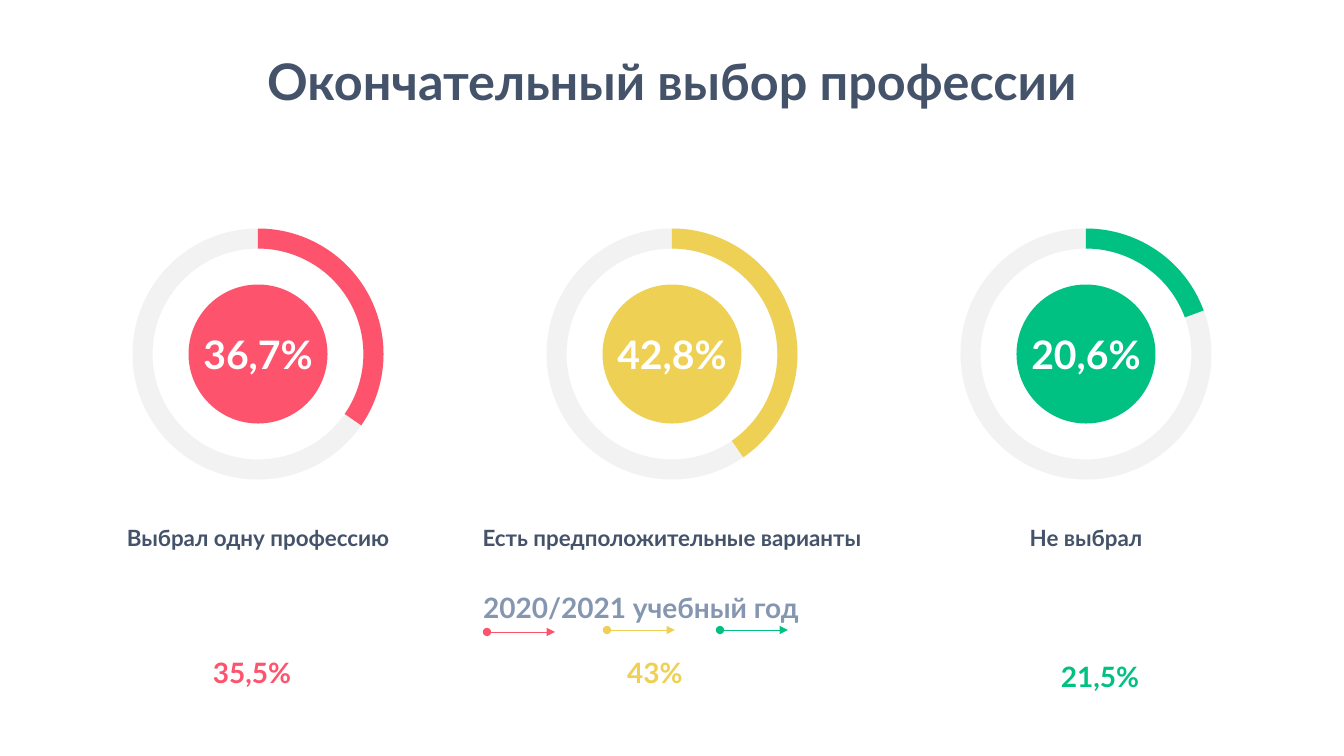
from collections import namedtuple

from lxml import etree
from pptx import Presentation
from pptx import util as u
from pptx.dml.color import RGBColor
from pptx.enum import shapes, text
from pptx.oxml.ns import qn

# Content
TITLE = "Окончательный выбор профессии"
YEAR = "2020/2021 учебный год"
Choice = namedtuple("Choice", "label share sweep color previous previous_at arrow_at")
CHOICES = [
    Choice("Выбрал одну профессию", "36,7%", 124.65, "FD536D", "35,5%", (252, 642), (487, 632)),
    Choice("Есть предположительные варианты", "42,8%", 145.4, "EED054", "43%", (655, 642), (607, 630)),
    Choice("Не выбрал", "20,6%", 69.7, "00C182", "21,5%", (1100, 646), (720, 630)),
]


class Theme:
    font = "Lato"
    dark, muted, track, white = "44536A", "8496B0", "F2F2F2", "FFFFFF"
    title, share, value, label = 36, 28, 20, 16


# Layout in px
PX = 914400 / 100.8
WIDTH, HEIGHT = 1344, 756
FIRST_CENTER, PITCH, RING_MIDDLE = 258, 414, 354
RING, DISC, ARROW = 251, 139, 68
RING_THICKNESS = 0.08
DEGREE = 0.6  # one degree as an adjustment value


def px(*lengths):
    return [u.Emu(round(length * PX)) for length in lengths]


def write(shape, words, size, color, spacing=1.0, anchor=text.MSO_ANCHOR.TOP):
    frame = shape.text_frame
    frame.text = words
    frame.word_wrap = False
    frame.auto_size = text.MSO_AUTO_SIZE.NONE
    frame.vertical_anchor = anchor
    frame.margin_left = frame.margin_right = u.Inches(0.1)
    frame.margin_top = frame.margin_bottom = u.Inches(0.05)
    para = frame.paragraphs[0]
    para.alignment = text.PP_ALIGN.CENTER
    para.line_spacing = spacing
    para.font.name = Theme.font
    para.font.size = u.Pt(size)
    para.font.bold = True
    para.font.color.rgb = RGBColor.from_string(color)


def add_text(page, words, center, top, width, height, size, color, spacing=1.0):
    box = page.shapes.add_textbox(*px(center - width / 2, top, width, height))
    write(box, words, size, color, spacing)


def add_round(page, kind, center, size, color):
    shape = page.shapes.add_shape(
        kind, *px(center - size / 2, RING_MIDDLE - size / 2, size, size))
    shape.shadow.inherit = False
    shape.fill.solid()
    shape.fill.fore_color.rgb = RGBColor.from_string(color)
    shape.line.fill.background()
    return shape


def add_gauge(page, center, choice):
    ring = add_round(page, shapes.MSO_SHAPE.DONUT, center, RING, Theme.track)
    ring.adjustments[0] = RING_THICKNESS
    arc = add_round(page, shapes.MSO_SHAPE.BLOCK_ARC, center, RING, choice.color)
    arc.adjustments[0] = 270 * DEGREE
    arc.adjustments[1] = (270 + choice.sweep) % 360 * DEGREE
    arc.adjustments[2] = RING_THICKNESS
    disc = add_round(page, shapes.MSO_SHAPE.OVAL, center, DISC, choice.color)
    write(disc, choice.share, Theme.share, Theme.white, anchor=text.MSO_ANCHOR.MIDDLE)


def add_arrow(page, left, y, color):
    arrow = page.shapes.add_connector(
        shapes.MSO_CONNECTOR.STRAIGHT, *px(left, y, left + ARROW, y))
    arrow.line.color.rgb = RGBColor.from_string(color)
    arrow.line.width = u.Pt(0.5)
    line = arrow.line._get_or_add_ln()
    for end, kind in (("a:headEnd", "oval"), ("a:tailEnd", "triangle")):
        etree.SubElement(line, qn(end), type=kind)
    etree.SubElement(arrow._element.spPr, qn("a:effectLst"))


def main():
    deck = Presentation()
    deck.slide_width, deck.slide_height = px(WIDTH, HEIGHT)
    page = deck.slides.add_slide(deck.slide_layouts[5])

    # Title
    title = page.shapes.title
    title.left, title.top, title.width, title.height = px(218, 45, 908, 72)
    write(title, TITLE, Theme.title, Theme.dark)

    # Gauges with labels, last year's values and arrows
    for column, choice in enumerate(CHOICES):
        center = FIRST_CENTER + column * PITCH
        add_gauge(page, center, choice)
        add_text(page, choice.label, center, 519, 400, 37, Theme.label, Theme.dark)
        middle, top = choice.previous_at
        add_text(page, choice.previous, middle, top, 270, 48,
                 Theme.value, choice.color, 1.25)
        add_arrow(page, *choice.arrow_at, choice.color)

    # Last year's heading
    add_text(page, YEAR, 641, 577, 762, 48, Theme.value, Theme.muted, 1.25)

    deck.save("out.pptx")


if __name__ == "__main__":
    main()
